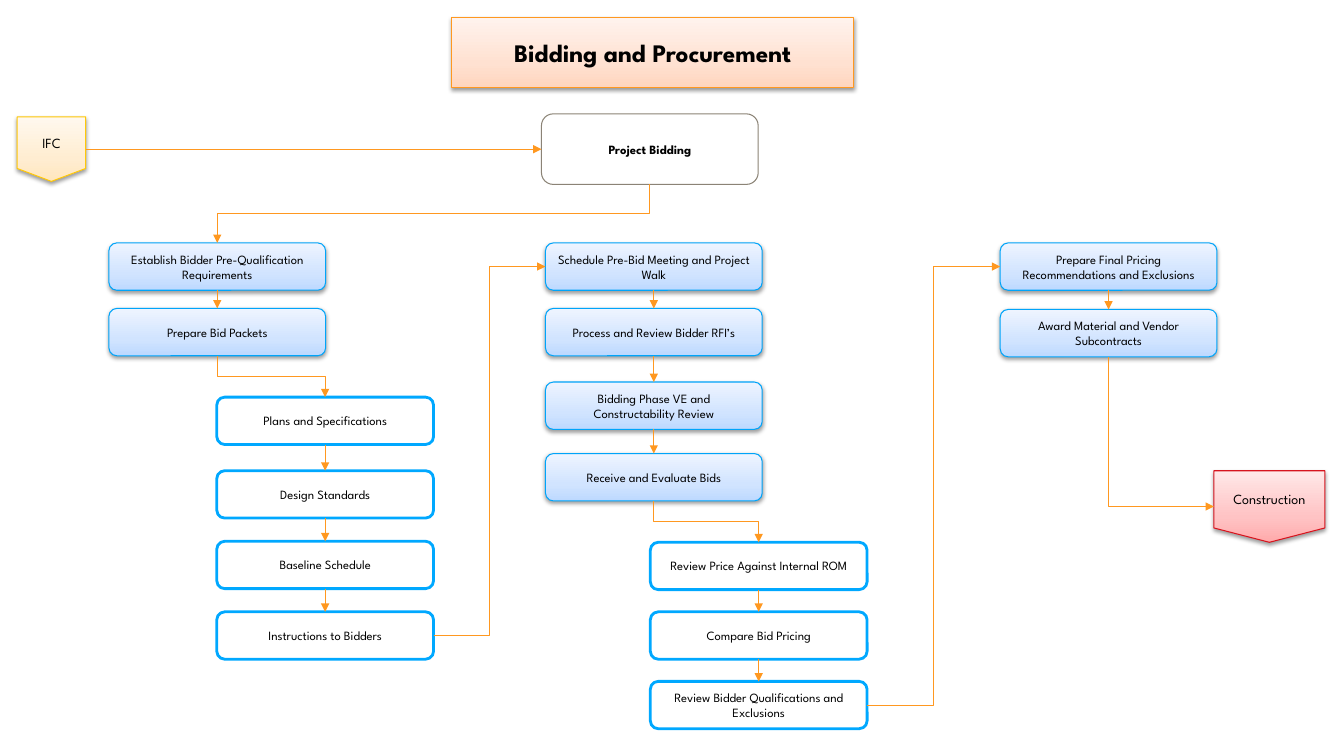
from copy import deepcopy
from dataclasses import dataclass

from lxml import etree
from pptx import Presentation
from pptx.dml.color import RGBColor
from pptx.enum.shapes import MSO_CONNECTOR, MSO_SHAPE
from pptx.enum.text import MSO_ANCHOR, MSO_AUTO_SIZE, PP_ALIGN
from pptx.oxml import parse_xml
from pptx.oxml.ns import nsdecls, qn
from pptx.shapes.autoshape import Shape
from pptx.slide import Slide
from pptx.util import Inches, Pt

FONT = "League Spartan"
ARROW_COLOR = "FF9820"
BOX_W, BOX_H = 2.15, 0.47
TOP, LEFT, BOTTOM, RIGHT = range(4)  # connection sites
ROUNDED = MSO_SHAPE.ROUNDED_RECTANGLE
OFFPAGE = MSO_SHAPE.FLOWCHART_OFFPAGE_CONNECTOR
STRAIGHT, ELBOW = MSO_CONNECTOR.STRAIGHT, MSO_CONNECTOR.ELBOW
STOP_POSITIONS = (0, 0.35, 1)


@dataclass(frozen=True)
class Style:
    """Look of a box: no fill colour is hollow, one is solid, three are a gradient."""
    line: str
    fills: tuple[str, ...] = ()
    line_width: float = 0.75
    size: int = 9
    bold: bool = False


@dataclass(frozen=True)
class Column:
    left: float
    style: Style
    steps: tuple[tuple[float, str], ...]
    from_side: int  # side the arrow leaves the preceding box
    to_side: int  # side the arrow enters the first box


TITLE = Style("FF9820", ("FFD5BE", "FFE1D1", "FFF3EE"), size=18, bold=True)
PHASE = Style("8B8376", bold=True)
PROCESS = Style("00A4F9", ("BDD9FF", "D1E4FF", "EEF4FF"))
DETAIL = Style("00A8FF", ("FFFFFF",), line_width=2)
SOURCE = Style("FFC808", ("FFE6BD", "FFEDD1", "FFF8EE"), size=10)
TARGET = Style("D7141E", ("FFAAAB", "FFC3C4", "FFE8E8"), size=10)

COLUMNS = (
    Column(1.08, PROCESS, (
        (2.41, "Establish Bidder Pre-Qualification Requirements"),
        (3.06, "Prepare Bid Packets"),
    ), BOTTOM, TOP),
    Column(2.15, DETAIL, (
        (3.94, "Plans and Specifications"),
        (4.67, "Design Standards"),
        (5.37, "Baseline Schedule"),
        (6.07, "Instructions to Bidders"),
    ), BOTTOM, TOP),
    Column(5.41, PROCESS, (
        (2.41, "Schedule Pre-Bid Meeting and Project Walk"),
        (3.06, "Process and Review Bidder RFI’s"),
        (3.79, "Bidding Phase VE and Constructability Review"),
        (4.5, "Receive and Evaluate Bids"),
    ), RIGHT, LEFT),
    Column(6.45, DETAIL, (
        (5.38, "Review Price Against Internal ROM"),
        (6.07, "Compare Bid Pricing"),
        (6.76, "Review Bidder Qualifications and Exclusions"),
    ), BOTTOM, TOP),
    Column(9.92, PROCESS, (
        (2.41, "Prepare Final Pricing Recommendations and Exclusions"),
        (3.07, "Award Material and Vendor Subcontracts"),
    ), RIGHT, LEFT),
)


def rgb(color: str) -> RGBColor:
    return RGBColor.from_string(color)


def add_shadow(sp: Shape) -> None:
    sp.shadow.inherit = False
    effects = sp._element.spPr.find(qn("a:effectLst"))
    effects.append(parse_xml(
        f'<a:outerShdw {nsdecls("a")} blurRad="{Pt(3.1)}" dist="{Pt(1.6)}" '
        'dir="5400000" rotWithShape="0"><a:srgbClr val="000000">'
        '<a:alpha val="38000"/></a:srgbClr></a:outerShdw>'))


def fill_shape(sp: Shape, colors: tuple[str, ...]) -> None:
    sp.shadow.inherit = False
    if not colors:
        sp.fill.background()
    elif len(colors) == 1:
        sp.fill.solid()
        sp.fill.fore_color.rgb = rgb(colors[0])
    else:
        sp.fill.gradient()
        sp.fill.gradient_angle = 90
        stops = sp._element.spPr.find(".//" + qn("a:gsLst"))
        stops.append(deepcopy(stops[0]))
        for stop, position, color in zip(sp.fill.gradient_stops, STOP_POSITIONS, colors):
            stop.position = position
            stop.color.rgb = rgb(color)
        add_shadow(sp)


def format_box(sp: Shape, text: str, style: Style) -> None:
    fill_shape(sp, style.fills)
    sp.line.color.rgb = rgb(style.line)
    sp.line.width = Pt(style.line_width)
    tf = sp.text_frame
    tf.word_wrap = True
    tf.auto_size = MSO_AUTO_SIZE.NONE
    tf.vertical_anchor = MSO_ANCHOR.MIDDLE
    p = tf.paragraphs[0]
    p.alignment = PP_ALIGN.CENTER
    r = p.add_run()
    r.text = text
    r.font.name = FONT
    r.font.size = Pt(style.size)
    r.font.bold = style.bold
    r.font.color.rgb = rgb("000000")


def add_box(slide: Slide, left: float, top: float, text: str, style: Style,
            width: float = BOX_W, height: float = BOX_H,
            preset: MSO_SHAPE = ROUNDED) -> Shape:
    sp = slide.shapes.add_shape(
        preset, Inches(left), Inches(top), Inches(width), Inches(height))
    format_box(sp, text, style)
    return sp


def add_title(slide: Slide, text: str) -> None:
    sp = slide.shapes.title
    sp.left, sp.top = Inches(4.48), Inches(0.17)
    sp.width, sp.height = Inches(3.99), Inches(0.7)
    sp._element.spPr.insert(1, parse_xml(
        f'<a:prstGeom {nsdecls("a")} prst="roundRect"><a:avLst/></a:prstGeom>'))
    format_box(sp, text, TITLE)


def site(sp: Shape, side: int) -> tuple[int, int]:
    """Return the middle of one side of a shape."""
    mid_x, mid_y = sp.left + sp.width // 2, sp.top + sp.height // 2
    return {TOP: (mid_x, sp.top), LEFT: (sp.left, mid_y),
            BOTTOM: (mid_x, sp.top + sp.height), RIGHT: (sp.left + sp.width, mid_y)}[side]


def link(slide: Slide, begin: Shape, from_side: int, end: Shape, to_side: int) -> None:
    (x1, y1), (x2, y2) = site(begin, from_side), site(end, to_side)
    straight = abs(x2 - x1) < Inches(0.01) or abs(y2 - y1) < Inches(0.01)
    cxn = slide.shapes.add_connector(STRAIGHT if straight else ELBOW, x1, y1, x2, y2)
    cxn.begin_connect(begin, from_side)
    cxn.end_connect(end, to_side)
    sp_pr = cxn._element.spPr
    if from_side == BOTTOM and not straight:
        # An elbow that leaves downwards is a turned one, with its sides swapped.
        rightward = x2 > x1
        width, height = abs(y2 - y1), abs(x2 - x1)
        cxn.left, cxn.top = (x1 + x2 - width) // 2, (y1 + y2 - height) // 2
        cxn.width, cxn.height = width, height
        sp_pr.xfrm.set("rot", "16200000" if rightward else "5400000")
        sp_pr.xfrm.set("flipH", "1" if rightward else "0")
        if to_side == LEFT:
            sp_pr.find(qn("a:prstGeom")).set("prst", "bentConnector2")
    cxn.line.color.rgb = rgb(ARROW_COLOR)
    cxn.line.width = Pt(0.75)
    etree.SubElement(sp_pr.find(qn("a:ln")), qn("a:tailEnd"), type="triangle")
    etree.SubElement(sp_pr, qn("a:effectLst"))


def main() -> None:
    prs = Presentation()
    prs.slide_width, prs.slide_height = Inches(13.33), Inches(7.5)
    slide = prs.slides.add_slide(prs.slide_layouts[5])
    add_title(slide, "Bidding and Procurement")

    ifc = add_box(slide, 0.17, 1.16, "IFC", SOURCE, 0.68, 0.64, OFFPAGE)
    previous = add_box(slide, 5.37, 1.13, "Project Bidding", PHASE, height=0.7)
    link(slide, ifc, RIGHT, previous, LEFT)

    for column in COLUMNS:
        from_side, to_side = column.from_side, column.to_side
        for top, text in column.steps:
            box = add_box(slide, column.left, top, text, column.style)
            link(slide, previous, from_side, box, to_side)
            previous, from_side, to_side = box, BOTTOM, TOP

    construction = add_box(slide, 12.04, 4.67, "Construction", TARGET, 1.1, 0.71, OFFPAGE)
    link(slide, previous, BOTTOM, construction, LEFT)
    prs.save("out.pptx")


if __name__ == "__main__":
    main()
